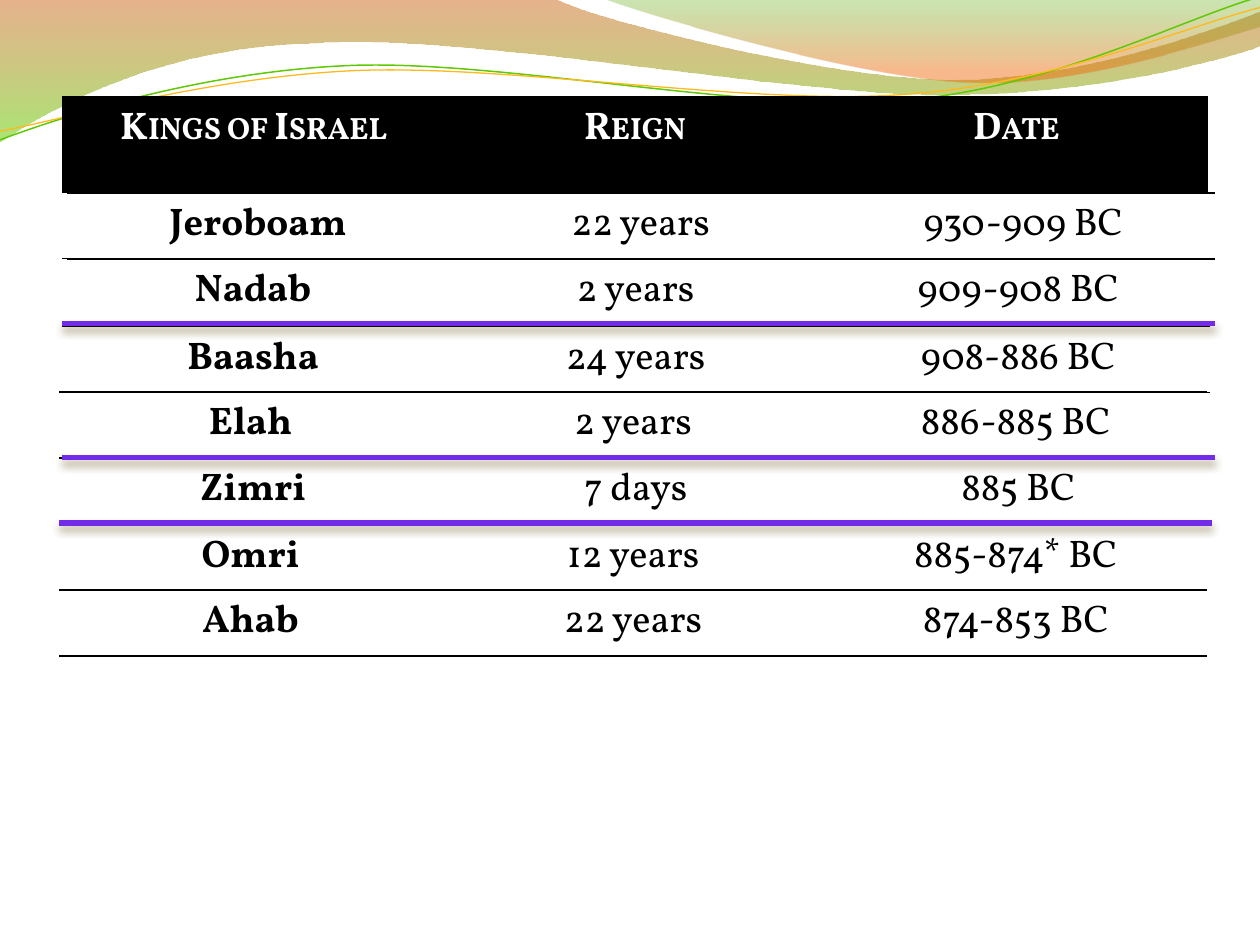
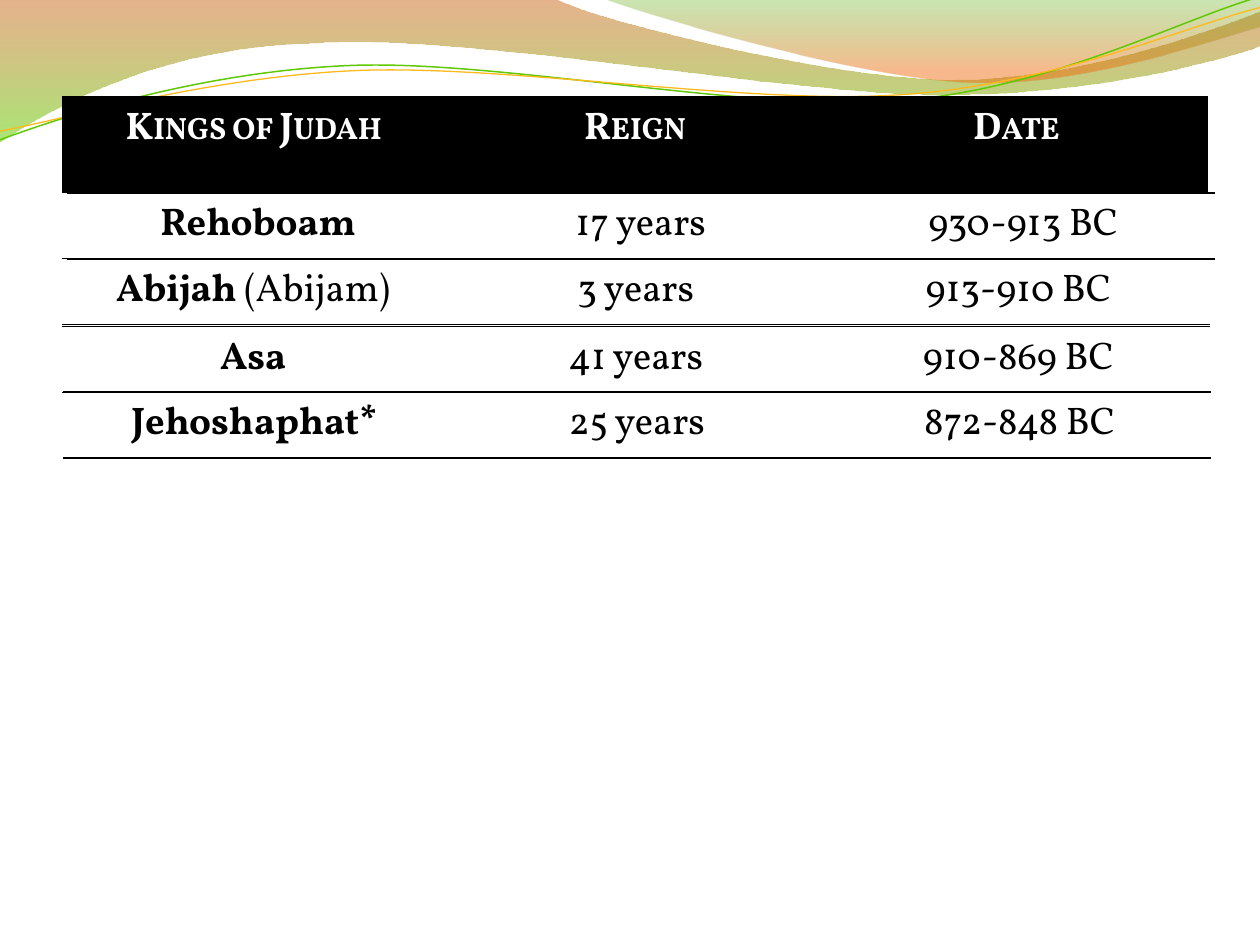
from math import cos, radians, sin

from lxml.etree import SubElement
from pptx import Presentation
from pptx.dml.color import RGBColor
from pptx.enum.shapes import MSO_CONNECTOR
from pptx.enum.text import PP_ALIGN
from pptx.oxml.ns import qn
from pptx.util import Inches, Pt

WIDE, HIGH = 10, 7.5
FONT, SIZE = "Vollkorn", 22
HEAD = {"left": 0.5, "top": 0.77, "wide": 9.08, "high": 0.76}
KING = {"wide": 9.11, "high": 0.52}
TOPS = (1.53, 2.05, 2.59, 3.11, 3.63, 4.16, 4.68)
RULE = 9.15
TILT, PIVOT = 2.7, (4.99, 0.58)
PLAIN = "{2D5ABB26-0587-4C30-8999-92F81FD0307C}"

COLOR = {
    "black": "000000", "white": "FFFFFF", "violet": "732BEA", "shade": "5B4208",
    "rust": "C95600", "lime": "63D200", "green": "50AB00", "orange": "F06700",
    "leaf": "60C804", "gold": "FFB91D",
}

# Each wave starts at a point; a step of one point is straight, of three a curve.
BANDS = [
    ([[(0, 0)], [(4.4, -0.01)],
      [(4.76, 0.17), (6.64, 0.63), (7.58, 0.63)],
      [(8.53, 0.63), (9.58, 0.26), (10, 0.09)], [(10.01, 0.36)],
      [(9.83, 0.44), (8.7, 0.76), (7.46, 0.75)],
      [(6.22, 0.75), (3.82, 0.28), (2.57, 0.34)],
      [(1.29, 0.36), (0.46, 0.83), (-0.01, 1.13)], [(0, 0)]],
     [(0, "rust", 45), (1, "lime", 55)]),
    ([[(4.79, -0.01)],
      [(5.09, 0.11), (6.82, 0.62), (7.69, 0.65)],
      [(8.56, 0.69), (9.61, 0.32), (10, 0.21)], [(10, 0)], [(4.79, -0.01)]],
     [(0, "green", 30), (0.8, "orange", 45)]),
]
LINES = [
    ([[(0, 1.11)],
      [(0.48, 0.93), (1.58, 0.57), (2.77, 0.52)],
      [(3.95, 0.47), (5.93, 0.89), (7.13, 0.8)],
      [(8.33, 0.71), (9.38, 0.15), (9.98, -0.02)]], "leaf", 0.85),
    ([[(0, 1.04)],
      [(0.47, 0.96), (1.64, 0.61), (2.83, 0.56)],
      [(4.03, 0.51), (5.97, 0.84), (7.17, 0.75)],
      [(8.36, 0.67), (9.41, 0.21), (10, 0.06)]], "gold", 0.75),
]

# Left edge, name, reign, date; a new royal house is ruled off above its row.
ISRAEL = [
    (0.53, "Jeroboam", "22 years", "930-909 BC"),
    (0.49, "Nadab", "2 years", "909-908 BC"),
    (0.49, "Baasha", "24 years", "908-886 BC"),
    (0.47, "Elah", "2 years", "886-885 BC"),
    (0.49, "Zimri", "7 days", "885 BC"),
    (0.47, "Omri", "12 years", "885-874* BC"),
    (0.47, "Ahab", "22 years", "874-853 BC"),
]
HOUSES = ("Baasha", "Zimri", "Omri")
JUDAH = [
    (0.53, "Rehoboam", "17 years", "930-913 BC"),
    (0.49, "Abijah (Abijam)", "3 years", "913-910 BC"),
    (0.49, "Asa", "41 years", "910-869 BC"),
    (0.5, "Jehoshaphat*", "25 years", "872-848 BC"),
]


def rgb(name):
    return RGBColor.from_string(COLOR[name])


def turn(dot, angle):
    """Turn a point clockwise about the pivot."""
    x, y = dot[0] - PIVOT[0], dot[1] - PIVOT[1]
    c, s = cos(radians(angle)), sin(radians(angle))
    return PIVOT[0] + x * c - y * s, PIVOT[1] + x * s + y * c


def draw_wave(shapes, steps, close):
    """Build the outline from its knots, then bend it into true curves."""
    steps = [[(Inches(x), Inches(y)) for x, y in step] for step in steps]
    dots = [dot for step in steps for dot in step]
    pen = shapes.build_freeform(*dots[0])
    pen.add_line_segments(dots[1:], close=close)
    wave = pen.convert_to_shape()
    wave.shadow.inherit = False
    trail = next(wave.element.spPr.iter(qn("a:path")))
    for part in list(trail):
        trail.remove(part)
    for i, step in enumerate(steps):
        kind = "moveTo" if i == 0 else "lnTo" if len(step) == 1 else "cubicBezTo"
        part = SubElement(trail, qn(f"a:{kind}"))
        for x, y in step:
            SubElement(part, qn("a:pt"), x=str(x - wave.left), y=str(y - wave.top))
    if close:
        SubElement(trail, qn("a:close"))
    return wave


def add_band(shapes, steps, stops):
    band = draw_wave(shapes, steps, True)
    band.line.fill.background()
    band.fill.gradient()
    band.fill.gradient_angle = 270
    for stop, (place, color, _) in zip(band.fill.gradient_stops, stops):
        stop.position = place
        stop.color.rgb = rgb(color)
    tones = band.element.spPr.iter(qn("a:srgbClr"))
    for tone, (_, _, alpha) in zip(tones, stops):
        SubElement(tone, qn("a:alpha"), val=str(alpha * 1000))
    return band


def add_line(shapes, steps, color, width):
    flat = [[turn(dot, TILT) for dot in step] for step in steps]
    line = draw_wave(shapes, flat, False)
    line.rotation = 360 - TILT
    line.fill.background()
    line.line.color.rgb = rgb(color)
    line.line.width = Pt(width)


def dress_master(deck, slide):
    """Draw the waves once and hand them to the master."""
    parts = [add_band(slide.shapes, *band).element for band in BANDS]
    group = slide.shapes.add_group_shape()
    for line in LINES:
        add_line(group.shapes, *line)
    parts.append(group.element)
    tree = deck.slide_master.element.cSld.spTree
    for part in parts:
        tree.append(part)
    for number, label in enumerate(tree.iter(qn("p:cNvPr")), 1):
        label.set("id", str(number))


def edge_cell(cell, sides, width):
    props = cell._tc.get_or_add_tcPr()
    for side in sides:
        line = SubElement(props, qn(f"a:ln{side}"), w=str(Pt(width)))
        fill = SubElement(line, qn("a:solidFill"))
        SubElement(fill, qn("a:srgbClr"), val=COLOR["black"])


def write_cell(cell, text, color, bold):
    para = cell.text_frame.paragraphs[0]
    para.alignment = PP_ALIGN.CENTER
    para.font.name, para.font.size = FONT, Pt(SIZE)
    para.font.color.rgb = rgb(color)
    para.font.bold = bold
    name, mark, rest = text.partition("(")
    para.add_run().text = name
    if mark:
        other = para.add_run()
        other.text = mark + rest
        other.font.bold = False
    return para


def add_strip(slide, left, top, wide, high, count):
    """Add a plain table of one row and return its cells."""
    frame = slide.shapes.add_table(1, count, Inches(left), Inches(top),
                                   Inches(wide), Inches(high))
    table = frame.table
    table.first_row = table.horz_banding = False
    table._tbl.tblPr.find(qn("a:tableStyleId")).text = PLAIN
    return list(table.rows[0].cells)


def add_head(slide, texts):
    cells = add_strip(slide, **HEAD, count=len(texts))
    for cell, text, sides in zip(cells, texts, ("LTB", "TB", "RTB")):
        edge_cell(cell, sides, 0.75)
        cell.fill.solid()
        cell.fill.fore_color.rgb = rgb("black")
        para = write_cell(cell, text, "white", True)
        para.font._element.set("cap", "small")


def add_king(slide, left, top, texts):
    cells = add_strip(slide, left, top, **KING, count=len(texts))
    for col, (cell, text) in enumerate(zip(cells, texts)):
        edge_cell(cell, "TB", 1)
        cell.fill.background()
        write_cell(cell, text, "black", col == 0)


def add_rule(slide, left, top):
    rule = slide.shapes.add_connector(MSO_CONNECTOR.STRAIGHT, Inches(left), Inches(top),
                                      Inches(left + RULE), Inches(top))
    rule.line.color.rgb = rgb("violet")
    rule.line.width = Pt(3)
    glow = SubElement(rule.element.spPr, qn("a:effectLst"))
    cast = SubElement(glow, qn("a:outerShdw"), blurRad=str(Pt(4.5)),
                      dist=str(Pt(3)), dir="5400000", rotWithShape="0")
    tone = SubElement(cast, qn("a:srgbClr"), val=COLOR["shade"])
    SubElement(tone, qn("a:alpha"), val="48000")


def fill_slide(slide, realm, kings, houses=()):
    add_head(slide, (f"Kings of {realm}", "Reign", "Date"))
    foot = TOPS[0]
    for top, (left, *texts) in zip(TOPS, kings):
        add_king(slide, left, top, texts)
        if texts[0] in houses:
            add_rule(slide, left, foot)
        foot = top + KING["high"]


def main():
    deck = Presentation()
    deck.slide_width, deck.slide_height = Inches(WIDE), Inches(HIGH)
    blank = deck.slide_layouts[6]
    north, south = (deck.slides.add_slide(blank) for _ in range(2))
    dress_master(deck, north)
    fill_slide(north, "Israel", ISRAEL, HOUSES)
    fill_slide(south, "Judah", JUDAH)
    deck.save("out.pptx")


if __name__ == "__main__":
    main()
